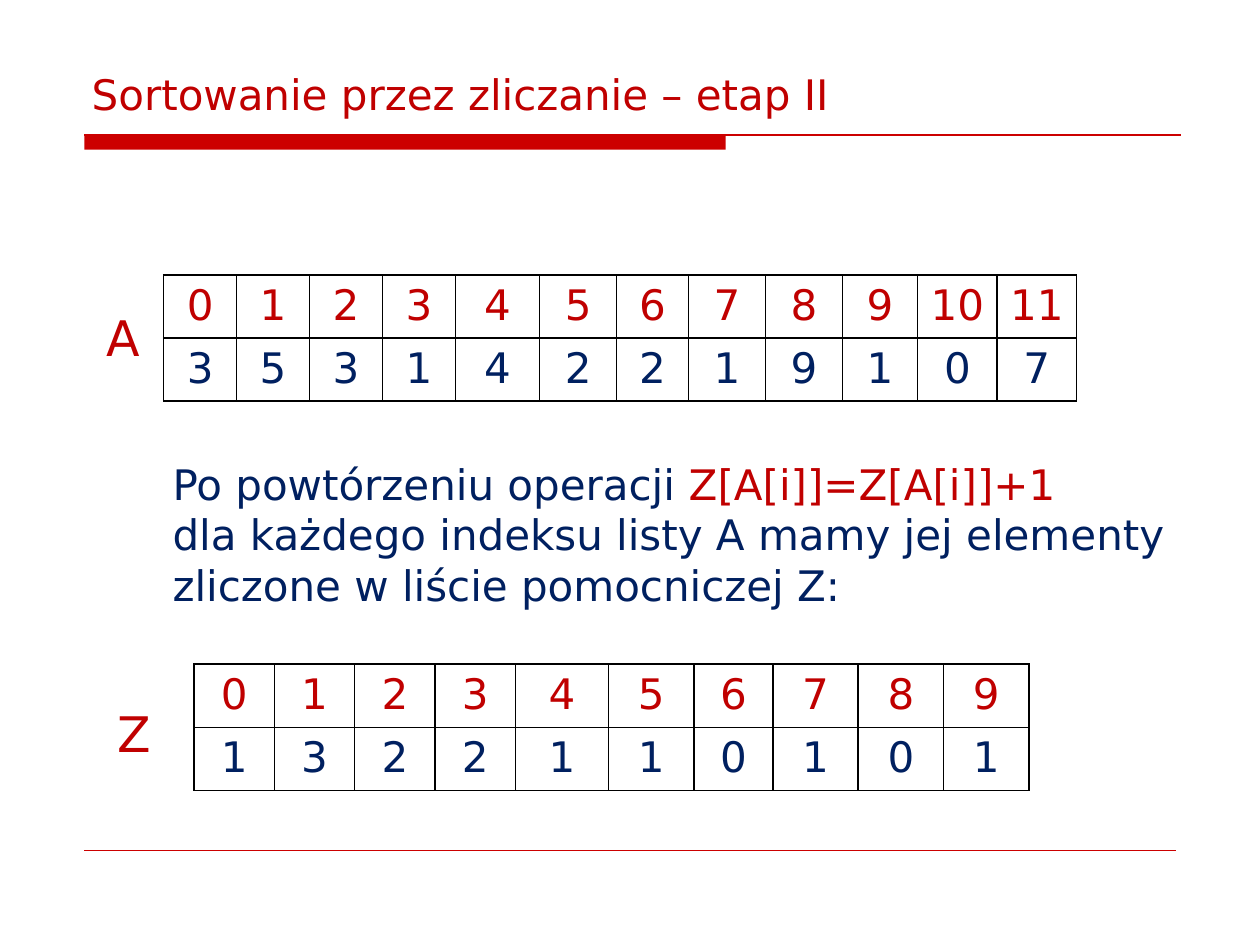
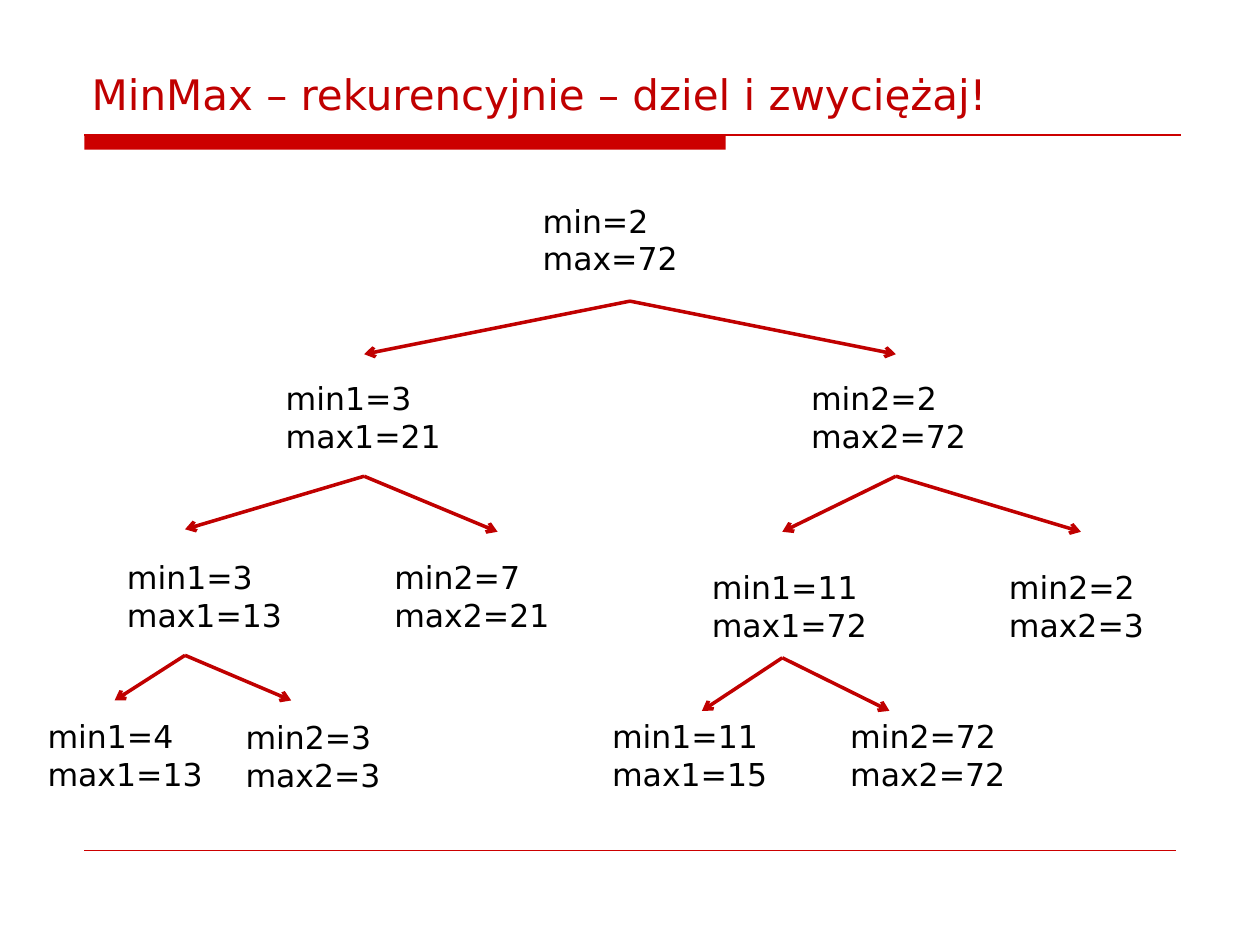
from dataclasses import dataclass

from lxml import etree
from pptx import Presentation
from pptx import util as u
from pptx.dml.color import RGBColor
from pptx.enum import shapes, text
from pptx.oxml import ns

COLORS = {
    "band": "CC0000",
    "accent": "C00000",
    "navy": "002060",
    "ink": "000000",
    "paper": "FFFFFF",
}
FONT = "DejaVu Sans"


# All positions and lengths below are centimetres
@dataclass(frozen=True)
class Span:
    words: str
    color: str


@dataclass(frozen=True)
class IndexedList:
    name: str
    name_left: float
    name_top: float
    left: float
    top: float
    widths: tuple[float, ...]
    values: tuple[int, ...]


@dataclass(frozen=True)
class Node:
    lines: tuple[str, str]
    left: float
    top: float
    axis: float          # x of the arrow tip and of the fork
    tip: float = 0       # y where the arrow from the parent ends
    fork: float = 0      # y where the arrows to the children start
    children: tuple["Node", ...] = ()


LISTS = (
    IndexedList("A", 1.9, 6.07, 3.3, 5.54,
                (1.47,) * 4 + (1.7, 1.55, 1.45, 1.55, 1.55, 1.52, 1.6, 1.6),
                (3, 5, 3, 1, 4, 2, 2, 1, 9, 1, 0, 7)),
    IndexedList("Z", 2.11, 14.05, 3.91, 13.39,
                (1.62,) * 4 + (1.88, 1.72, 1.59) + (1.72,) * 3,
                (1, 3, 2, 2, 1, 1, 0, 1, 0, 1)),
)

EXPLANATION = [
    [Span("Po powtórzeniu operacji ", "navy"), Span("Z[A[i]]=Z[A[i]]+1", "accent")],
    [Span("dla każdego indeksu listy A mamy jej elementy", "navy")],
    [Span("zliczone w liście pomocniczej Z:", "navy")],
]

LEFT_HALF = Node(("min1=3", "max1=21"), 5.51, 7.52, 7.34, 7.14, 9.6, (
    Node(("min1=3", "max1=13"), 2.31, 11.13, 3.73, 10.67, 13.21, (
        Node(("min1=4", "max1=13"), 0.71, 14.33, 2.31, 14.12),
        Node(("min2=3", "max2=3"), 4.7, 14.35, 5.87, 14.12),
    )),
    Node(("min2=7", "max2=21"), 7.7, 11.13, 10.03, 10.72),
))
RIGHT_HALF = Node(("min2=2", "max2=72"), 16.1, 7.52, 18.06, 7.14, 9.6, (
    Node(("min1=11", "max1=72"), 14.1, 11.33, 15.77, 10.72, 13.26, (
        Node(("min1=11", "max1=15"), 12.09, 14.33, 14.15, 14.33),
        Node(("min2=72", "max2=72"), 16.89, 14.33, 17.93, 14.33),
    )),
    Node(("min2=2", "max2=3"), 20.09, 11.33, 21.79, 10.72),
))
ROOT = Node(("min=2", "max=72"), 10.69, 3.94, 12.7, fork=6.07,
            children=(LEFT_HALF, RIGHT_HALF))


def rgb(name: str) -> RGBColor:
    return RGBColor.from_string(COLORS[name])


def add_span(paragraph, span: Span, size: float) -> None:
    run = paragraph.add_run()
    run.text = span.words
    run.font.name = FONT
    run.font.size = u.Pt(size)
    run.font.color.rgb = rgb(span.color)


def add_text(slide, left: float, top: float, width: float, height: float,
             paragraphs: list[list[Span]], size: float,
             anchor=text.MSO_ANCHOR.TOP) -> None:
    frame = slide.shapes.add_textbox(
        u.Cm(left), u.Cm(top), u.Cm(width), u.Cm(height)).text_frame
    frame.word_wrap = True
    frame.vertical_anchor = anchor
    for number, spans in enumerate(paragraphs):
        paragraph = frame.add_paragraph() if number else frame.paragraphs[0]
        for span in spans:
            add_span(paragraph, span, size)


def add_line(slide, start: tuple[float, float], end: tuple[float, float],
             color: str, weight: float, arrow: bool = False) -> None:
    line = slide.shapes.add_connector(
        shapes.MSO_CONNECTOR.STRAIGHT, *(u.Cm(c) for c in start + end))
    line.line.color.rgb = rgb(color)
    line.line.width = u.Pt(weight)
    if arrow:
        etree.SubElement(line.line._get_or_add_ln(), ns.qn("a:tailEnd"), type="arrow")
    etree.SubElement(line._element.spPr, ns.qn("a:effectLst"))


def add_base_slide(deck, title: str):
    """Blank slide with the title, the band under it and the footer rule."""
    slide = deck.slides.add_slide(deck.slide_layouts[6])
    slide.background.fill.solid()
    slide.background.fill.fore_color.rgb = rgb("paper")
    band = slide.shapes.add_shape(shapes.MSO_SHAPE.RECTANGLE,
                                  u.Cm(1.7), u.Cm(2.72), u.Cm(12.93), u.Cm(0.3))
    band.shadow.inherit = False
    band.fill.solid()
    band.fill.fore_color.rgb = rgb("band")
    band.line.fill.background()
    add_line(slide, (1.7, 2.72), (23.8, 2.72), "band", 0.75)
    add_line(slide, (1.7, 17.15), (23.7, 17.15), "band", 0.25)
    add_text(slide, 1.6, 0.84, 22.22, 1.68, [[Span(title, "accent")]], 24,
             text.MSO_ANCHOR.BOTTOM)
    return slide


def style_cell(cell, words: str, color: str) -> None:
    cell.fill.background()
    cell.margin_left = cell.margin_right = u.Cm(0.1)
    paragraph = cell.text_frame.paragraphs[0]
    paragraph.alignment = text.PP_ALIGN.CENTER
    add_span(paragraph, Span(words, color), 24)
    properties = cell._tc.get_or_add_tcPr()
    for place, side in enumerate("LRTB"):
        border = etree.Element(ns.qn(f"a:ln{side}"), w=str(u.Pt(1)))
        fill = etree.SubElement(border, ns.qn("a:solidFill"))
        etree.SubElement(fill, ns.qn("a:srgbClr"), val=COLORS["ink"])
        properties.insert(place, border)


def add_indexed_list(slide, item: IndexedList) -> None:
    """Table with the indices above the values, and the list name beside it."""
    row_height = u.Cm(1.24)
    table = slide.shapes.add_table(
        2, len(item.values), u.Cm(item.left), u.Cm(item.top),
        u.Cm(sum(item.widths)), 2 * row_height).table
    table.first_row = table.horz_banding = False
    for row in table.rows:
        row.height = row_height
    for index, (width, value) in enumerate(zip(item.widths, item.values)):
        table.columns[index].width = u.Cm(width)
        style_cell(table.cell(0, index), str(index), "accent")
        style_cell(table.cell(1, index), str(value), "navy")
    add_text(slide, item.name_left, item.name_top, 1.4, 1.45,
             [[Span(item.name, "accent")]], 28)


def add_tree(slide, node: Node) -> None:
    """Node label, arrows to its children, then the children themselves."""
    add_text(slide, node.left, node.top, 4.1, 1.8,
             [[Span(line, "ink")] for line in node.lines], 18)
    for child in node.children:
        add_line(slide, (node.axis, node.fork), (child.axis, child.tip),
                 "accent", 2, arrow=True)
        add_tree(slide, child)


def main() -> None:
    deck = Presentation()
    deck.slide_width, deck.slide_height = u.Cm(25.4), u.Cm(19.05)

    # Counting sort
    counting = add_base_slide(deck, "Sortowanie przez zliczanie – etap II")
    for item in LISTS:
        add_indexed_list(counting, item)
    add_text(counting, 3.23, 9.12, 21.18, 3.33, EXPLANATION, 24)

    # Recursive MinMax
    minmax = add_base_slide(deck, "MinMax – rekurencyjnie – dziel i zwyciężaj!")
    add_tree(minmax, ROOT)

    deck.save("out.pptx")


if __name__ == "__main__":
    main()
